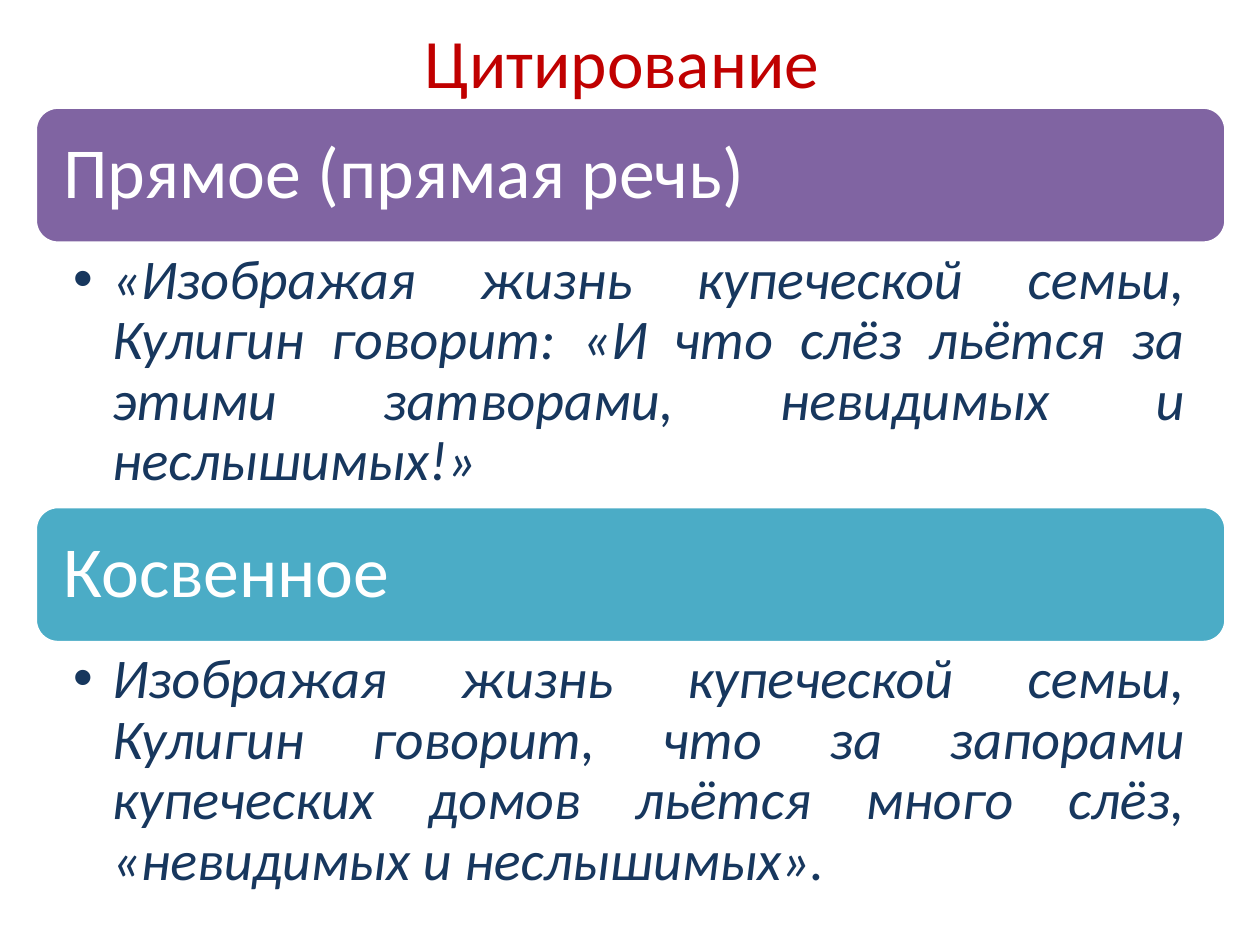
from lxml import etree
from pptx import Presentation
from pptx.dml.color import RGBColor
from pptx.enum.shapes import MSO_SHAPE
from pptx.enum.text import MSO_ANCHOR, MSO_AUTO_SIZE, PP_ALIGN
from pptx.oxml.ns import qn
from pptx.util import Inches, Pt

ROUNDED = MSO_SHAPE.ROUNDED_RECTANGLE
TOP, MIDDLE = MSO_ANCHOR.TOP, MSO_ANCHOR.MIDDLE
NO_FIT = MSO_AUTO_SIZE.NONE
LEFT, CENTER, JUSTIFY = PP_ALIGN.LEFT, PP_ALIGN.CENTER, PP_ALIGN.JUSTIFY


def rgb(value):
    return RGBColor.from_string(value)


def write(tf, text, size, color, align, anchor, margins, italic=False):
    frame = {"word_wrap": True, "auto_size": NO_FIT, "vertical_anchor": anchor}
    for side, margin in zip(("left", "top", "right", "bottom"), margins):
        frame["margin_" + side] = Inches(margin)
    for name, value in frame.items():
        setattr(tf, name, value)
    p = tf.paragraphs[0]
    p.alignment = align
    p.line_spacing = 0.9
    r = p.add_run()
    r.text = text
    for name, value in {"name": "Calibri", "size": Pt(size), "bold": False, "italic": italic}.items():
        setattr(r.font, name, value)
    r.font.color.rgb = rgb(color)
    return p


prs = Presentation()
prs.slide_width, prs.slide_height = Inches(10), Inches(7.5)
s = prs.slides.add_slide(prs.slide_layouts[5])

title = s.shapes.title
title.left, title.top, title.width, title.height = [Inches(v) for v in (0.5, 0.13, 9, 0.71)]
p = write(title.text_frame, "Цитирование ", 39.6, "C00000", CENTER, MIDDLE, (0.1, 0.05, 0.1, 0.05))
p.line_spacing = 1.0

sections = [
    ("Прямое (прямая речь)", "8064A2",
     "«Изображая жизнь купеческой семьи, Кулигин говорит: «И что слёз льётся за этими "
     "затворами, невидимых и неслышимых!»"),
    ("Косвенное", "4BACC6",
     "Изображая жизнь купеческой семьи, Кулигин говорит, что за запорами купеческих домов "
     "льётся много слёз, «невидимых и неслышимых»."),
]
left, top, width = 0.28, 0.85, 9.45
head_h, body_h = 1.08, 2.09

for i, (heading, color, quote) in enumerate(sections):
    y = top + i * (head_h + body_h)
    sp = s.shapes.add_shape(ROUNDED, Inches(left), Inches(y), Inches(width), Inches(head_h))
    sp.shadow.inherit = False
    sp.fill.solid()
    sp.fill.fore_color.rgb = rgb(color)
    sp.line.color.rgb = rgb("FFFFFF")
    sp.line.width = Pt(2)
    write(sp.text_frame, heading, 41, "FFFFFF", LEFT, MIDDLE, (0.17, 0.17, 0.17, 0.17))

    sp = s.shapes.add_textbox(Inches(left), Inches(y + head_h), Inches(width), Inches(body_h))
    p = write(sp.text_frame, quote, 32, "17375E", JUSTIFY, TOP, (0.3, 0.06, 0.32, 0.06), italic=True)
    pPr = p._p.get_or_add_pPr()
    pPr.set("marL", str(Inches(0.31)))
    pPr.set("indent", str(-Inches(0.31)))
    etree.SubElement(pPr, qn("a:buFont")).set("typeface", "Arial")
    etree.SubElement(pPr, qn("a:buChar")).set("char", "•")

prs.save("out.pptx")
